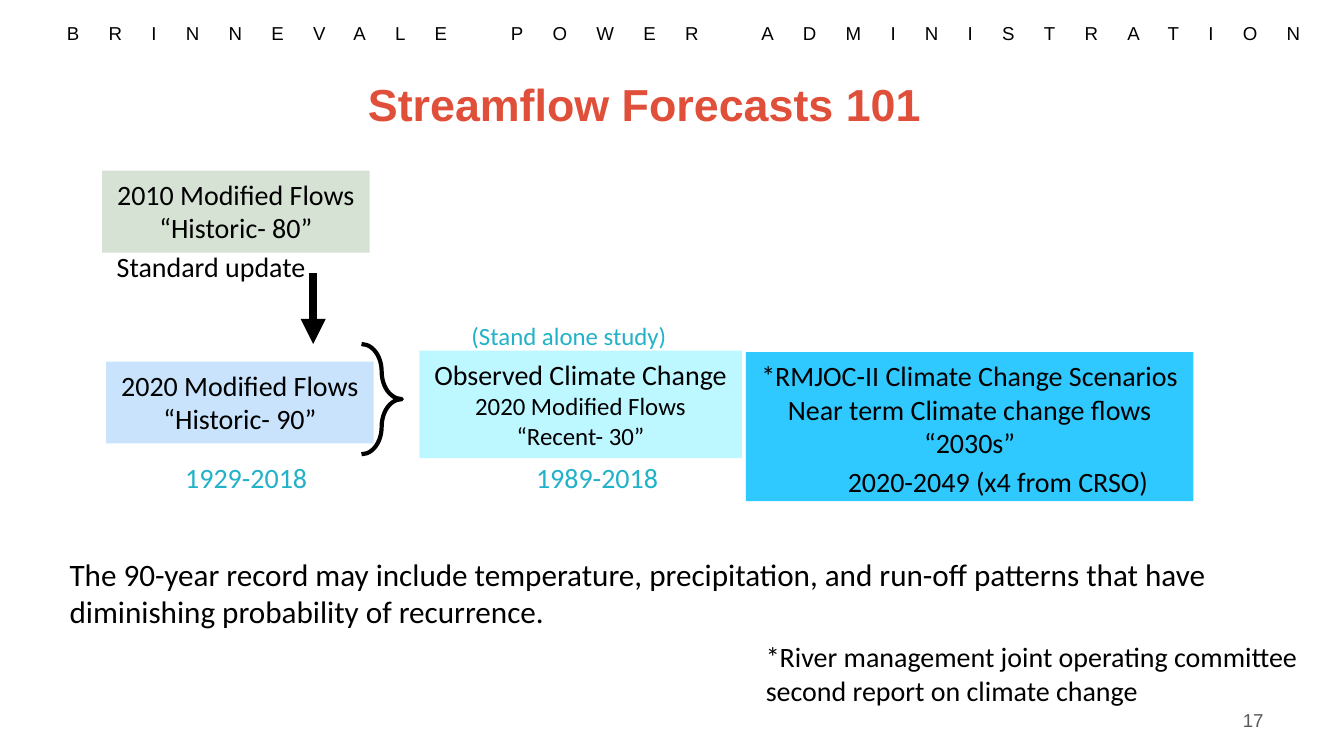
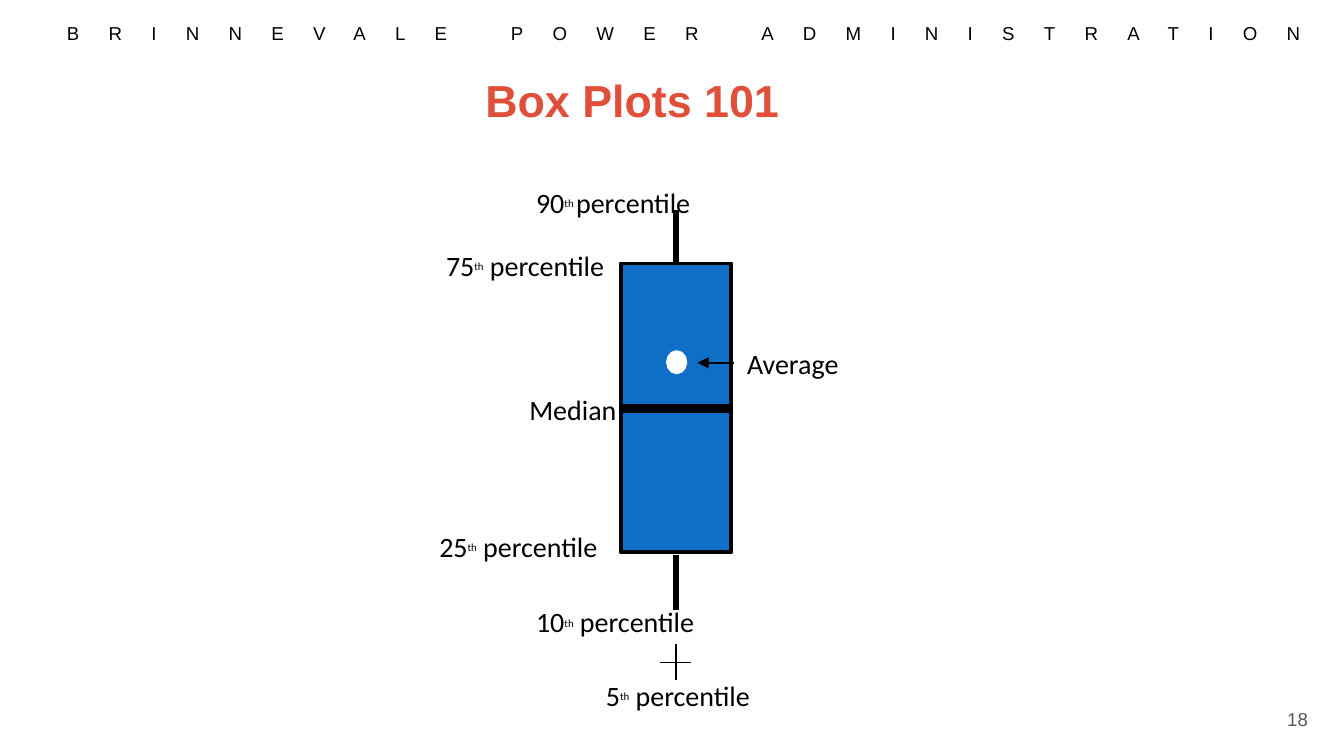
from pptx import Presentation
from pptx.dml.color import RGBColor
from pptx.enum.shapes import MSO_CONNECTOR, MSO_SHAPE
from pptx.enum.text import MSO_ANCHOR, MSO_AUTO_SIZE, PP_ALIGN
from pptx.util import Inches, Pt
from lxml import etree

LEFT, MID, RIGHT = PP_ALIGN.LEFT, PP_ALIGN.CENTER, PP_ALIGN.RIGHT
TOP, CENTRE = MSO_ANCHOR.TOP, MSO_ANCHOR.MIDDLE
STRAIGHT = MSO_CONNECTOR.STRAIGHT
NS = "{http://schemas.openxmlformats.org/drawingml/2006/main}"
hue = RGBColor.from_string

BLACK, WHITE, GREY = "000000", "FFFFFF", "595959"
RED, TEAL, BLUE = "E04F39", "21B2C9", "0F6FC6"
U = Inches(0.1)  # grid cell: the slide is 100 columns wide

prs = Presentation()
prs.slide_width, prs.slide_height = 100 * U, int(56.25 * U)
plain = prs.slide_layouts[5]


def write(page, lines, x, y, w, h, size=15, color=BLACK, font="Calibri",
          bold=False, align=LEFT, anchor=TOP, wrap=True, fill=None,
          space=None, box=None):
    """Each line is a string or a list of (text, size, baseline) runs."""
    if box is None:
        box = page.shapes.add_textbox(0, 0, U, U)
    box.left, box.top, box.width, box.height = [int(n * U) for n in (x, y, w, h)]
    if fill:
        box.fill.solid()
        box.fill.fore_color.rgb = hue(fill)
    frame = box.text_frame
    frame.auto_size = MSO_AUTO_SIZE.NONE
    frame.word_wrap, frame.vertical_anchor = wrap, anchor
    for i, line in enumerate(lines):
        para = frame.add_paragraph() if i else frame.paragraphs[0]
        para.alignment = align
        for text, points, base in [(line, size, 0)] if isinstance(line, str) else line:
            run = para.add_run()
            run.text = text
            run.font.name, run.font.size, run.font.bold = font, Pt(points), bold
            run.font.color.rgb = hue(color)
            mark = run.font._element
            if base:
                mark.set("baseline", str(base * 1000))
            if space:
                mark.set("spc", str(int(space * 100)))
    return box


def rule(page, x1, y1, x2, y2, weight, arrow=False):
    line = page.shapes.add_connector(
        STRAIGHT, *[int(n * U) for n in (x1, y1, x2, y2)])
    line.line.color.rgb = hue(BLACK)
    line.line.width = Pt(weight)
    props = line.element.spPr
    if arrow:
        etree.SubElement(props.find(NS + "ln"), NS + "tailEnd", type="triangle")
    etree.SubElement(props, NS + "effectLst")


# Shared parts: title and page number on each slide, banner on the layout
pages = []
for title, tx, ty, num, nx, ny in [
        ("Streamflow Forecasts 101 ", 9.2, 5.2, "17", 71.7, 52.1),
        ("Box Plots 101 ", 8.3, 4.9, "18", 75, 52)]:
    page = prs.slides.add_slide(plain)
    write(page, [title], tx, ty, 78.4, 5, size=24, color=RED, font="Arial",
          bold=True, align=MID, anchor=CENTRE, box=page.shapes.title)
    write(page, [num], nx, ny, 23.3, 3, size=10, color=GREY, font="Arial",
          align=RIGHT, anchor=CENTRE)
    pages.append(page)
flows, plot = pages

banner = write(flows, ["BRINNEVALE POWER ADMINISTRATION"], 0, 1.1, 101.7, 2.7,
               size=10, font="Arial", align=MID, wrap=False, space=15.7)
plain.shapes.element.append(banner.element)

# Streamflow: filled boxes
SMALL = 13.3
for lines, x, y, w, h, fill in [
        (["2010 Modified Flows", "“Historic- 80”"], 7.6, 12.7, 19.9, 6.1, "D6E2D4"),
        (["2020 Modified Flows", "“Historic- 90”"], 7.9, 26.9, 19.9, 6.1, "C8E3FB"),
        (["Observed Climate Change", [("2020 Modified Flows", SMALL, 0)],
          [("“Recent- 30”", SMALL, 0)]], 31.2, 26.1, 24, 8, "BDF7FF"),
        (["*RMJOC-II Climate Change Scenarios", "Near term Climate change flows",
          "“2030s”"], 55.5, 26.2, 33.3, 11.1, "2FC9FF")]:
    write(flows, lines, x, y, w, h, fill=fill, align=MID, wrap=False)

# Streamflow: update arrow and brace
rule(flows, 23.3, 20.3, 23.3, 25.6, 4.5, arrow=True)
brace = flows.shapes.add_shape(
    MSO_SHAPE.RIGHT_BRACE, *[int(n * U) for n in (26.9, 25.6, 3, 8.2)])
brace.adjustments[0], brace.adjustments[1] = 1.19, 0.5
brace.shadow.inherit = False
brace.fill.background()
brace.line.color.rgb = hue(BLACK)
brace.line.width = Pt(2.25)

# Streamflow: labels and years
write(flows, ["Standard update"], 7.7, 18.1, 17.5, 3.5)
write(flows, ["(Stand alone study)"], 34.1, 23.4, 18.3, 3.3, size=SMALL, color=TEAL)
for years, x, y, w, color in [
        ("1929-2018", 12.8, 33.8, 11.2, TEAL),
        ("1989-2018", 38.9, 33.8, 11.2, TEAL),
        ("2020-2049 (x4 from CRSO)", 62.1, 34.1, 24.6, BLACK)]:
    write(flows, [years], x, y, w, 3.5, color=color, wrap=False)

# Streamflow: remarks
write(flows, ["The 90-year record may include temperature, precipitation, and "
              "run-off patterns that have diminishing probability of recurrence."],
      4.2, 40.8, 94.4, 6.6, size=16.7)
write(flows, ["*River management joint operating committee second report on "
              "climate change"], 56, 47.1, 42.4, 6.1)

# Box plot: box, median, whiskers and outlier cross
BOX, AXIS, EDGE = 46.2, 50.3, 54.4
parts = [(MSO_SHAPE.RECTANGLE, BOX, 19.6, EDGE - BOX, 21.5, BLUE, BLACK),
         (MSO_SHAPE.OVAL, 49.7, 26.2, 1.3, 1.5, WHITE, WHITE)]
for kind, x, y, w, h, fill, edge in parts:
    part = plot.shapes.add_shape(kind, *[int(n * U) for n in (x, y, w, h)])
    part.shadow.inherit = False
    part.fill.solid()
    part.fill.fore_color.rgb = hue(fill)
    part.line.color.rgb = hue(edge)
    part.line.width = Pt(2)
rule(plot, BOX, 30.4, EDGE, 30.4, 4.5)
rule(plot, AXIS, 19.6, AXIS, 15.6, 3)
rule(plot, AXIS, 45.4, AXIS, 41.3, 3)
rule(plot, AXIS, 47.9, AXIS, 50.6, 0.75)
rule(plot, 49.1, 49.3, 51.4, 49.3, 0.75)

# Box plot: labels
for rank, mark, word, x, y in [
        ("90", "th ", "percentile", 38.9, 13.3),
        ("75", "th", " percentile", 32.2, 18),
        ("10", "th", " percentile", 38.9, 44.5),
        ("5", "th", " percentile", 44.1, 50),
        ("25", "th", " percentile", 31.7, 38.9)]:
    write(plot, [[(rank, 15, 0), (mark, 10, 30), (word, 15, 0)]], x, y, 15.5, 3.5)
write(plot, ["Median"], 38.4, 28.7, 9.8, 3.5)
write(plot, ["Average"], 54.6, 25.3, 8.9, 3.5, wrap=False)
rule(plot, 54.6, 27, 51.9, 27, 0.75, arrow=True)

prs.save("out.pptx")
